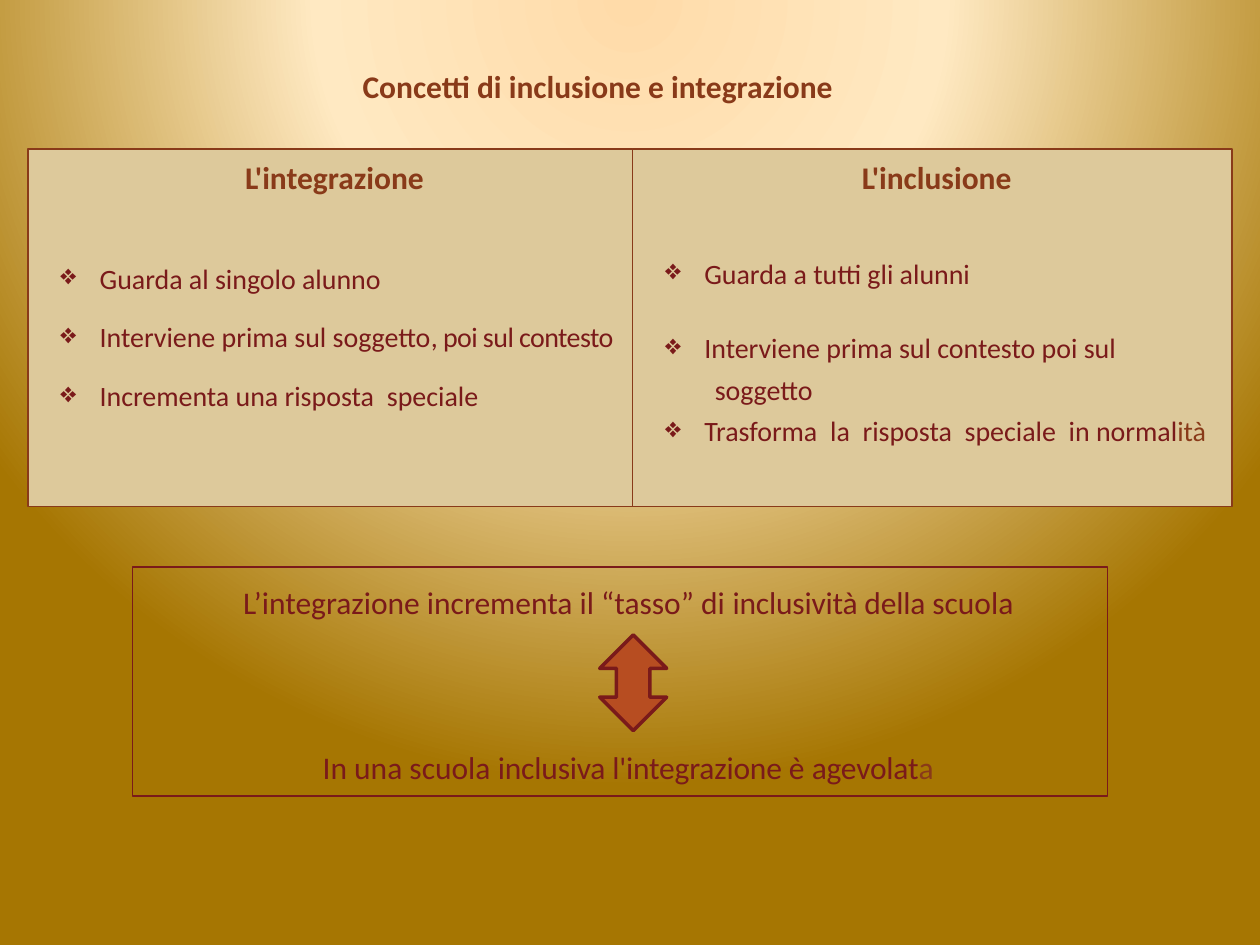
from dataclasses import dataclass

from lxml import etree
from pptx import Presentation, util as u
from pptx.dml.color import RGBColor
from pptx.enum import shapes, text
from pptx.oxml import parse_xml
from pptx.oxml.ns import nsdecls, qn

FONT = "Calibri"
COLORS = {
    "heading": "893A19",
    "body": "7A1A1A",
    "panel": "DDC99B",
    "arrow": "B74D21",
}
BACKDROP_STOPS = [(0, "FFDBA9"), (40, "FFE9C2"), (100, "A67602")]


@dataclass
class Piece:
    """A stretch of text with one colour and one letter spacing in points."""
    words: str
    color: str = "body"
    spacing: float = 0


@dataclass
class Line:
    pieces: list[Piece]
    size: int = 16
    bold: bool = False
    centered: bool = False
    bullet: bool = False
    left: float = 0
    before: float = 0
    after: float = 0
    leading: float = 1


def heading(words: str) -> Line:
    return Line([Piece(words, "heading")], 18, True, True, left=0.18, after=4.5, leading=1.15)


def point(*pieces: Piece, before: float, leading: float = 1) -> Line:
    return Line(list(pieces), bullet=True, left=1.45, before=before, leading=leading)


def conclusion(*pieces: Piece, before: float = 0) -> Line:
    return Line(list(pieces), 18, centered=True, left=0.33, before=before, after=4.5, leading=1.14)


def spread(words: str, gap: float) -> list[Piece]:
    """Widen the space after each word by gap points."""
    return [piece for word in words.split() for piece in (Piece(word), Piece(" ", spacing=gap))]


def write(frame, lines: list[Line]) -> None:
    for index, line in enumerate(lines):
        paragraph = frame.paragraphs[0] if index == 0 else frame.add_paragraph()
        paragraph.alignment = text.PP_ALIGN.CENTER if line.centered else text.PP_ALIGN.LEFT
        paragraph.line_spacing = line.leading
        paragraph.space_before = u.Pt(line.before)
        paragraph.space_after = u.Pt(line.after)
        properties = paragraph._p.get_or_add_pPr()
        properties.set("marL", str(u.Cm(line.left)))
        properties.set("indent", str(u.Cm(-0.79 if line.bullet else 0)))
        if line.bullet:
            etree.SubElement(properties, qn("a:buChar")).set("char", "❖")
        for piece in line.pieces:
            run = paragraph.add_run()
            run.text = piece.words
            run.font.name = FONT
            run.font.size = u.Pt(line.size)
            run.font.bold = line.bold
            run.font.color.rgb = RGBColor.from_string(COLORS[piece.color])
            if piece.spacing:
                run._r.get_or_add_rPr().set("spc", str(round(piece.spacing * 100)))


def add_figure(slide, kind, place: tuple, fill: str | None, outline: str, weight: float):
    figure = slide.shapes.add_shape(kind, *map(u.Cm, place))
    figure.shadow.inherit = False
    if fill:
        figure.fill.solid()
        figure.fill.fore_color.rgb = RGBColor.from_string(COLORS[fill])
    else:
        figure.fill.background()
    figure.line.color.rgb = RGBColor.from_string(COLORS[outline])
    figure.line.width = u.Pt(weight)
    figure.text_frame.word_wrap = True
    figure.text_frame.vertical_anchor = text.MSO_ANCHOR.TOP
    return figure


def add_panel(slide, left: float, width: float, lines: list[Line]) -> None:
    panel = add_figure(slide, shapes.MSO_SHAPE.RECTANGLE, (left, 3, width, 7.21),
                       "panel", "heading", 1)
    frame = panel.text_frame
    frame.margin_left = frame.margin_right = frame.margin_bottom = 0
    frame.margin_top = u.Cm(0.07)
    write(frame, lines)


def paint_backdrop(slide) -> None:
    """Radial gradient centred above the slide."""
    slide.background.fill.solid()
    solid = slide.background._cSld.bg.bgPr.find(qn("a:solidFill"))
    stops = "".join(f'<a:gs pos="{share * 1000}"><a:srgbClr val="{color}"/></a:gs>'
                    for share, color in BACKDROP_STOPS)
    gradient = parse_xml(
        f'<a:gradFill {nsdecls("a")} rotWithShape="1"><a:gsLst>{stops}</a:gsLst>'
        '<a:path path="circle"><a:fillToRect l="50000" t="-80000" r="50000" b="180000"/></a:path>'
        '</a:gradFill>')
    solid.getparent().replace(solid, gradient)


def main() -> None:
    deck = Presentation()
    deck.slide_width, deck.slide_height = u.Cm(25.4), u.Cm(19.05)
    slide = deck.slides.add_slide(deck.slide_layouts[6])
    paint_backdrop(slide)

    title = slide.shapes.add_textbox(*map(u.Cm, (7.06, 1.22, 10.8, 1.02))).text_frame
    title.word_wrap = False
    title.auto_size = text.MSO_AUTO_SIZE.SHAPE_TO_FIT_TEXT
    write(title, [Line([Piece("Concetti di inclusione e integrazione", "heading")], 18, True)])

    add_panel(slide, 0.56, 12.19, [
        heading("L'integrazione"),
        point(Piece("Guarda al singolo alunno"), before=30, leading=1.15),
        point(Piece("Interviene prima sul soggetto"), Piece(", poi sul contesto", spacing=-0.3),
              before=4.9, leading=1.5),
        point(Piece("Incrementa una risposta"), Piece(" ", spacing=3.6), Piece("speciale"),
              before=4.9, leading=1.5),
    ])
    add_panel(slide, 12.75, 12.09, [
        heading("L'inclusione"),
        point(Piece("Guarda a tutti gli alunni"), before=30),
        point(Piece("Interviene prima sul contesto poi sul"), before=23.5),
        Line([Piece("soggetto")], left=1.66, before=4.9),
        point(*spread("Trasforma la risposta speciale", 3.6), Piece("in normal"),
              Piece("ità", "heading"), before=4.2),
    ])

    summary = add_figure(slide, shapes.MSO_SHAPE.RECTANGLE, (2.67, 11.43, 19.66, 4.62),
                         None, "body", 0.75).text_frame
    summary.margin_top = u.Cm(0.22)
    summary.auto_size = text.MSO_AUTO_SIZE.SHAPE_TO_FIT_TEXT
    write(summary, [
        conclusion(Piece("L’integrazione incrementa il “tasso” di "),
                   Piece("inclusività della ", spacing=-0.1), Piece("scuola")),
        conclusion(Piece("In una scuola "), Piece("inclusiva l'integrazione ", spacing=-0.1),
                   Piece("è "), Piece("agevolat", spacing=-0.1), Piece("a", "heading"),
                   before=65.3),
    ])
    add_figure(slide, shapes.MSO_SHAPE.UP_DOWN_ARROW, (12.09, 12.8, 1.35, 1.93),
               "arrow", "body", 2)

    deck.save("out.pptx")


if __name__ == "__main__":
    main()
